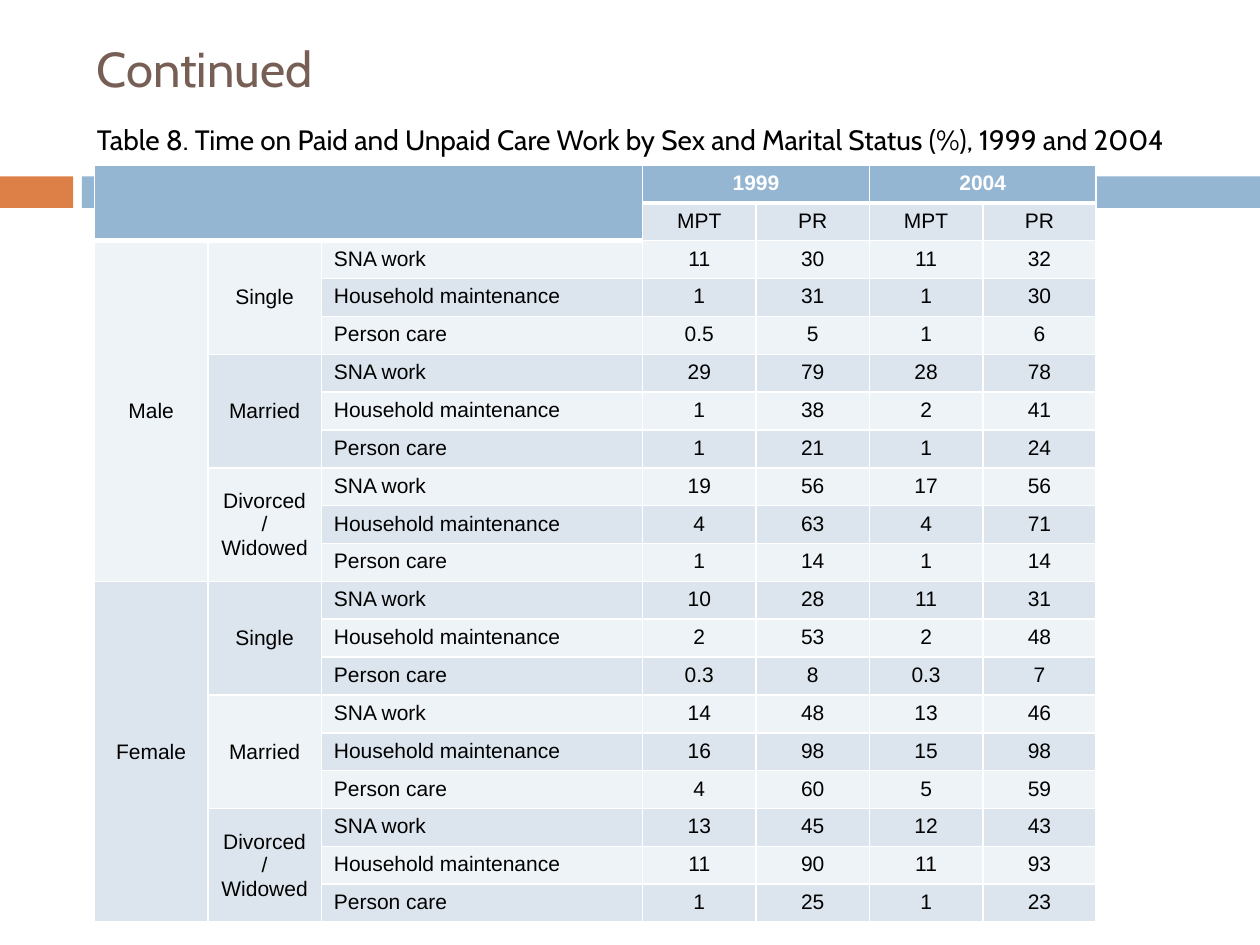
from pptx import Presentation
from pptx.dml.color import RGBColor
from pptx.enum.shapes import MSO_SHAPE
from pptx.enum.text import MSO_ANCHOR, PP_ALIGN
from pptx.oxml.ns import qn
from pptx.util import Inches, Pt
from lxml.etree import SubElement

ORANGE = RGBColor(0xDD, 0x80, 0x47)
BLUE = RGBColor(0x94, 0xB6, 0xD2)
BROWN = RGBColor(0x77, 0x5F, 0x55)
BLACK = RGBColor(0, 0, 0)
WHITE = RGBColor(0xFF, 0xFF, 0xFF)
LIGHT = RGBColor(0xEE, 0xF3, 0xF7)
DARK = RGBColor(0xDC, 0xE5, 0xEE)

SEXES = ["Male", "Female"]
STATUSES = ["Single", "Married", "Divorced/\nWidowed"]
ACTIVITIES = ["SNA work", "Household maintenance", "Person care"]
# MPT and PR for 1999, then MPT and PR for 2004
VALUES = [
    ("11", "30", "11", "32"), ("1", "31", "1", "30"), ("0.5", "5", "1", "6"),
    ("29", "79", "28", "78"), ("1", "38", "2", "41"), ("1", "21", "1", "24"),
    ("19", "56", "17", "56"), ("4", "63", "4", "71"), ("1", "14", "1", "14"),
    ("10", "28", "11", "31"), ("2", "53", "2", "48"), ("0.3", "8", "0.3", "7"),
    ("14", "48", "13", "46"), ("16", "98", "15", "98"), ("4", "60", "5", "59"),
    ("13", "45", "12", "43"), ("11", "90", "11", "93"), ("1", "25", "1", "23"),
]
COL_WIDTHS = [0.9, 0.9, 2.55, 0.9, 0.9, 0.9, 0.9]
HEAD_ROWS = 2


def add_run(p, text, font, size, color, bold=False):
    r = p.add_run()
    r.text = text
    r.font.name, r.font.size, r.font.bold = font, Pt(size), bold
    r.font.color.rgb = color


def add_band(s, left, top, width, height):
    """Orange tab and blue bar across the slide."""
    tab, gap = 0.58, 0.07
    bar = tab + gap
    for x, w, color in [(left, tab, ORANGE), (left + bar, width - bar, BLUE)]:
        sp = s.shapes.add_shape(MSO_SHAPE.RECTANGLE, Inches(x), Inches(top),
                                Inches(w), Inches(height))
        sp.shadow.inherit = False
        sp.fill.solid()
        sp.fill.fore_color.rgb = color
        sp.line.fill.background()


def add_text(s, left, top, width, height, text, size, color, anchor):
    sp = s.shapes.add_textbox(Inches(left), Inches(top), Inches(width), Inches(height))
    tf = sp.text_frame
    tf.word_wrap = True
    tf.vertical_anchor = anchor
    p = tf.paragraphs[0]
    add_run(p, text, "Cabin", size, color)
    return p


def set_borders(cell, bottom):
    tc_pr = cell._tc.get_or_add_tcPr()
    for side, width in [("L", 1), ("R", 1), ("T", 1), ("B", bottom)]:
        ln = SubElement(tc_pr, qn(f"a:ln{side}"), w=str(Pt(width)))
        fill = SubElement(ln, qn("a:solidFill"))
        SubElement(fill, qn("a:srgbClr"), val=str(WHITE))


def fill_cell(table, row, col, text, align=PP_ALIGN.CENTER, rows=1, cols=1):
    """Write one cell, merged over the given rows and columns."""
    cell = table.cell(row, col)
    if rows * cols > 1:
        cell.merge(table.cell(row + rows - 1, col + cols - 1))
    if rows > 1:
        cell.vertical_anchor = MSO_ANCHOR.MIDDLE
    head = row == 0
    tf = cell.text_frame
    for i, line in enumerate(text.split("\n")):
        p = tf.add_paragraph() if i else tf.paragraphs[0]
        p.alignment = align
        add_run(p, line, "Arial", 12, WHITE if head else BLACK, head)


def add_time_table(s, left, top, width, height):
    n_rows = HEAD_ROWS + len(VALUES)
    frame = s.shapes.add_table(n_rows, len(COL_WIDTHS), Inches(left), Inches(top),
                               Inches(width), Inches(height))
    table = frame.table
    for column, w in zip(table.columns, COL_WIDTHS):
        column.width = Inches(w)

    # Striped fills and white rules
    for i, row in enumerate(table.rows):
        row.height = Inches(0.24 if i else 0.26)
        for j, cell in enumerate(row.cells):
            corner = i < HEAD_ROWS and j < 3
            set_borders(cell, 3 if i == 0 or corner else 1)
            cell.fill.solid()
            cell.fill.fore_color.rgb = BLUE if i == 0 or corner else DARK if i % 2 else LIGHT
            if corner:  # a small empty line keeps the heading rows low
                p = cell.text_frame.paragraphs[0]
                SubElement(p._p, qn("a:endParaRPr"), sz="1200")

    # Headings
    table.cell(0, 0).merge(table.cell(HEAD_ROWS - 1, 2))
    for k, year in enumerate(["1999", "2004"]):
        col = 3 + 2 * k
        fill_cell(table, 0, col, year, cols=2)
        fill_cell(table, 1, col, "MPT")
        fill_cell(table, 1, col + 1, "PR")

    # Sex and marital status groups, then activities with their values
    per_status = len(ACTIVITIES)
    per_sex = per_status * len(STATUSES)
    for i, values in enumerate(VALUES):
        row = HEAD_ROWS + i
        if i % per_sex == 0:
            fill_cell(table, row, 0, SEXES[i // per_sex], rows=per_sex)
        if i % per_status == 0:
            status = STATUSES[i // per_status % len(STATUSES)]
            fill_cell(table, row, 1, status, rows=per_status)
        fill_cell(table, row, 2, ACTIVITIES[i % per_status], PP_ALIGN.LEFT)
        for j, value in enumerate(values):
            fill_cell(table, row, 3 + j, value)
    frame.height = Inches(height)


def main():
    prs = Presentation()
    prs.slide_width, prs.slide_height = Inches(10), Inches(7.5)
    s = prs.slides.add_slide(prs.slide_layouts[6])
    add_band(s, 0, 1.4, 10, 0.25)
    add_text(s, 0.67, 0, 8.92, 1.08, "Continued", 28, BROWN, MSO_ANCHOR.MIDDLE)
    caption = add_text(
        s, 0.67, 0.92, 8.92, 4.92,
        "Table 8. Time on Paid and Unpaid Care Work by Sex and Marital Status (%), 1999 and 2004",
        16, BLACK, MSO_ANCHOR.TOP)
    caption.space_before = Pt(7)
    p_pr = caption._p.get_or_add_pPr()
    p_pr.set("marL", str(Inches(0.35)))
    p_pr.set("indent", str(Inches(-0.35)))
    add_time_table(s, 0.75, 1.31, 7.95, 5.75)
    prs.save("out.pptx")


if __name__ == "__main__":
    main()
